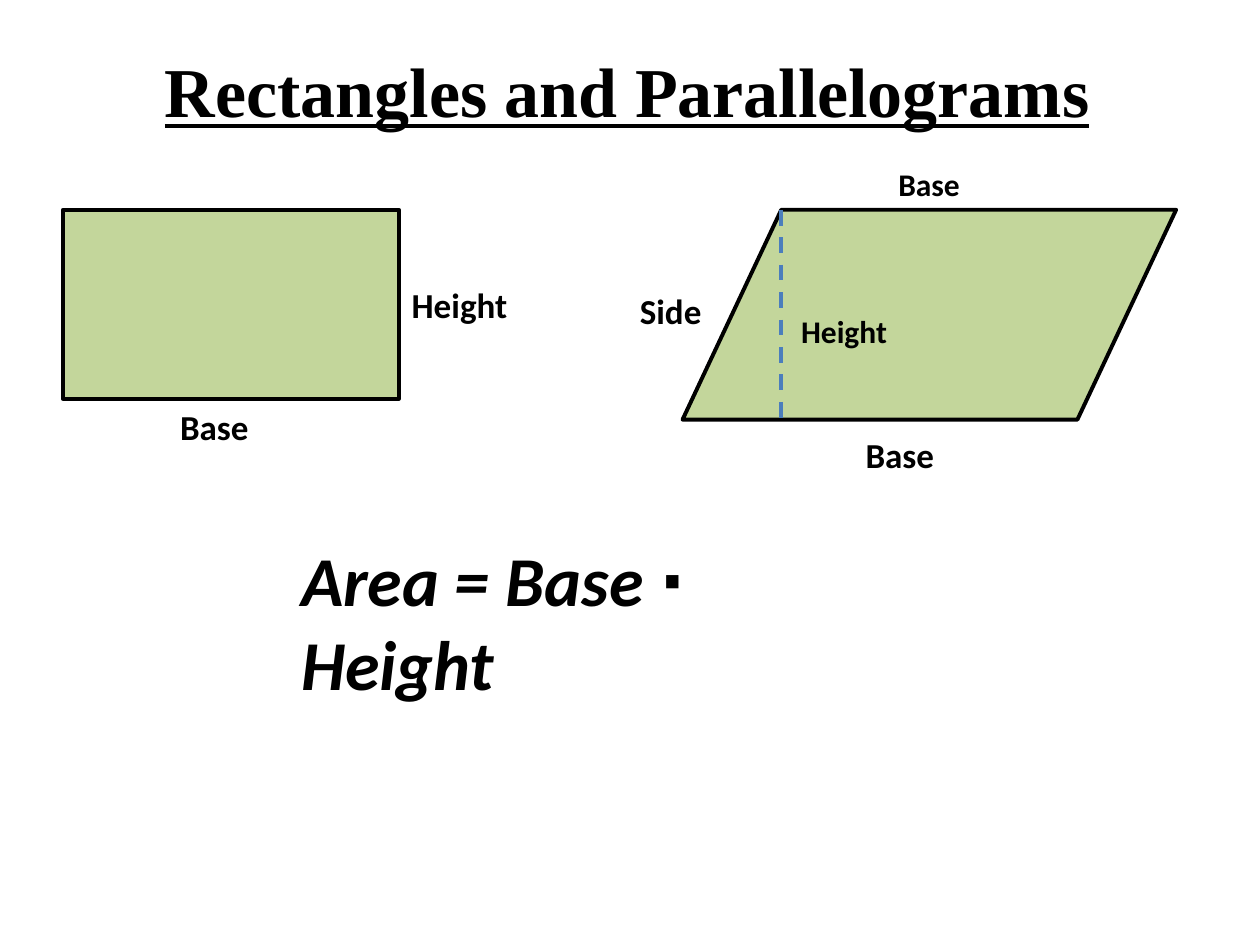
from lxml import etree
from pptx import Presentation
from pptx.dml.color import RGBColor
from pptx.enum import dml, shapes, text
from pptx.oxml.ns import qn
from pptx.util import Cm, Pt

BLACK = RGBColor(0x00, 0x00, 0x00)
GREEN = RGBColor(0xC3, 0xD6, 0x9B)
BLUE = RGBColor(0x4B, 0x7E, 0xBC)
LINE_WIDTH = Pt(2.25)

TITLE = "Rectangles and Parallelograms"
TITLE_AREA = (2.97, 0.84, 19.35, 1.96)

# Left, top, width, height in centimetres
RECTANGLE = (1.27, 4.23, 6.77, 3.81)
PARALLELOGRAM = (13.76, 4.23, 9.95, 4.23)
SLANT = 1 / 5  # share of the parallelogram's width taken by its slant

# Wording, left, top, width, point size
LABELS = [
    ("Height", 8.05, 5.59, 2.46, 20),
    ("Base", 3.38, 8.05, 1.9, 20),
    ("Side", 12.65, 5.72, 1.78, 20),
    ("Base", 17.2, 8.61, 1.9, 20),
    ("Height", 15.9, 6.17, 2.26, 18),
    ("Base", 17.86, 3.2, 1.75, 18),
]
FORMULA = ("Area = Base ∙ Height", 5.82, 10.69, 12.34, 40)


def write(box, wording, size, name="Calibri", wrap=False):
    frame = box.text_frame
    frame.text = wording
    frame.word_wrap = wrap
    frame.auto_size = text.MSO_AUTO_SIZE.NONE
    frame.vertical_anchor = text.MSO_ANCHOR.TOP
    font = frame.paragraphs[0].font
    font.name, font.size, font.bold = name, Pt(size), True
    font.color.rgb = BLACK
    return font


def add_label(page, wording, left, top, width, size, wrap=False):
    height = size * 0.0465 + 0.18
    box = page.shapes.add_textbox(Cm(left), Cm(top), Cm(width), Cm(height))
    return write(box, wording, size, wrap=wrap)


def add_figure(page, kind, area):
    figure = page.shapes.add_shape(kind, *map(Cm, area))
    figure.shadow.inherit = False
    figure.fill.solid()
    figure.fill.fore_color.rgb = GREEN
    figure.line.color.rgb = BLACK
    figure.line.width = LINE_WIDTH


def add_height_line(page):
    left, top, width, height = PARALLELOGRAM
    x = Cm(left + width * SLANT)
    line = page.shapes.add_connector(
        shapes.MSO_CONNECTOR.STRAIGHT, x, Cm(top), x, Cm(top + height))
    line.line.color.rgb = BLUE
    line.line.width = LINE_WIDTH
    line.line.dash_style = dml.MSO_LINE.DASH
    etree.SubElement(line._element.spPr, qn("a:effectLst"))


def main():
    deck = Presentation()
    deck.slide_width, deck.slide_height = Cm(25.4), Cm(19.05)
    page = deck.slides.add_slide(deck.slide_layouts[5])

    title = page.shapes.title
    title.left, title.top, title.width, title.height = map(Cm, TITLE_AREA)
    write(title, TITLE, 40, "Times New Roman").underline = True

    add_figure(page, shapes.MSO_SHAPE.RECTANGLE, RECTANGLE)
    add_figure(page, shapes.MSO_SHAPE.FLOWCHART_DATA, PARALLELOGRAM)
    add_height_line(page)
    for label in LABELS:
        add_label(page, *label)
    add_label(page, *FORMULA, wrap=True).italic = True

    deck.save("out.pptx")


if __name__ == "__main__":
    main()
